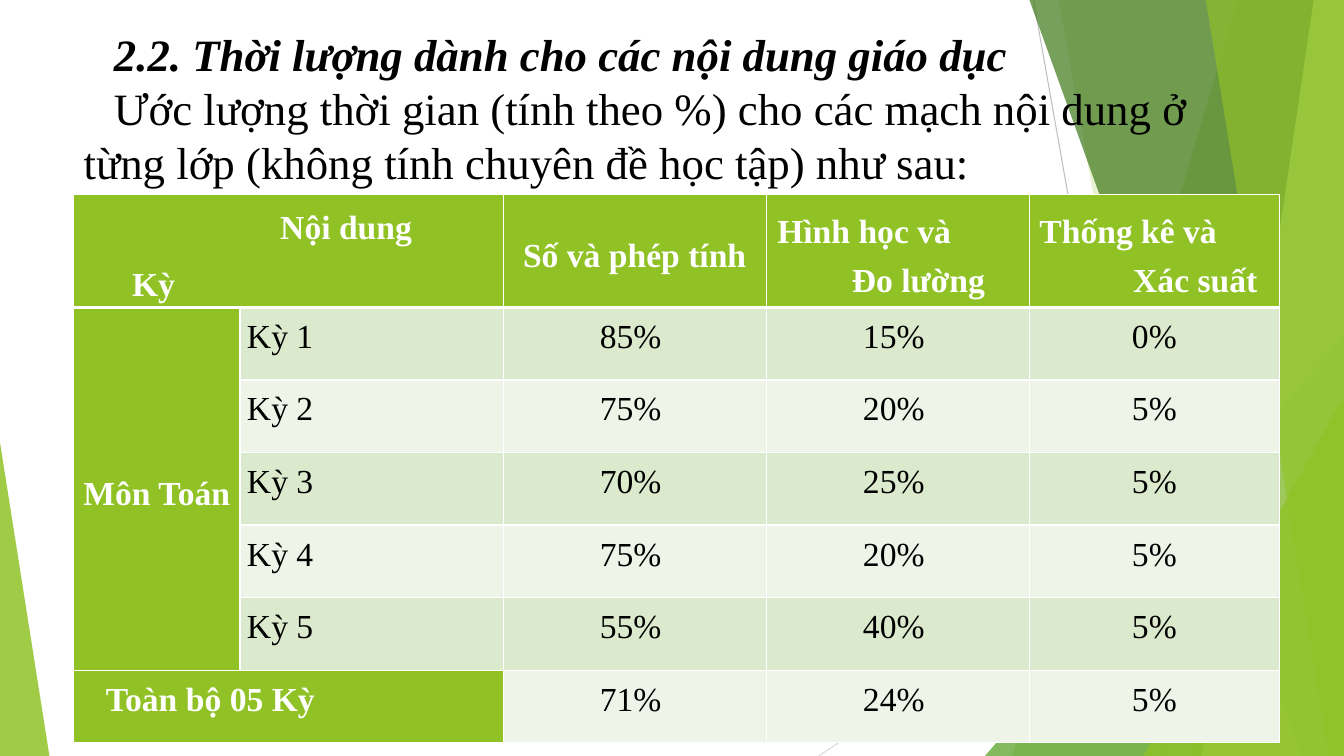
from dataclasses import dataclass
from lxml import etree
from pptx import Presentation
from pptx.dml.color import RGBColor
from pptx.enum.shapes import MSO_CONNECTOR, MSO_SHAPE
from pptx.enum.text import MSO_ANCHOR, MSO_AUTO_SIZE, PP_ALIGN
from pptx.oxml.ns import qn
from pptx.util import Inches, Pt

LEFT, CENTER = PP_ALIGN.LEFT, PP_ALIGN.CENTER
TOP, MIDDLE = MSO_ANCHOR.TOP, MSO_ANCHOR.MIDDLE
TRIANGLE, STRAIGHT = MSO_SHAPE.ISOSCELES_TRIANGLE, MSO_CONNECTOR.STRAIGHT
NO_FIT = MSO_AUTO_SIZE.NONE


@dataclass(frozen=True)
class Theme:
    """Colours, font and type sizes."""
    font: str = "Times New Roman"
    green: str = "90C226"
    leaf: str = "54A021"
    dark: str = "3F7819"
    lime: str = "C0E474"
    band: str = "DBE9CD"
    pale: str = "EEF4E8"
    white: str = "FFFFFF"
    black: str = "000000"
    gray: str = "BFBFBF"
    mist: str = "D9D9D9"
    head: int = 32
    body: int = 24


class Deck:
    """Draws elements on the current slide in one style."""

    def __init__(self, prs, theme):
        """Add a title-only slide."""
        self.theme = theme
        self.slide = prs.slides.add_slide(prs.slide_layouts[5])
        self.shapes = self.slide.shapes

    def line(self, start, end, color):
        """Draw a thin straight line."""
        item = self.shapes.add_connector(STRAIGHT, *map(Inches, start + end))
        item.line.color.rgb = RGBColor.from_string(color)
        item.line.width = Pt(0.75)
        etree.SubElement(item._element.spPr, qn("a:effectLst"))

    def paint(self, shape, color, alpha):
        """Fill a shape with a see-through colour."""
        shape.shadow.inherit = False
        shape.line.fill.background()
        shape.fill.solid()
        shape.fill.fore_color.rgb = RGBColor.from_string(color)
        tint = shape._element.spPr.find(".//" + qn("a:srgbClr"))
        etree.SubElement(tint, qn("a:alpha"), val=str(alpha * 1000))

    def facet(self, points, color, alpha):
        """Draw a closed polygon."""
        spots = [(Inches(x), Inches(y)) for x, y in points]
        outline = self.shapes.build_freeform(*spots[0])
        outline.add_line_segments(spots[1:], close=True)
        self.paint(outline.convert_to_shape(), color, alpha)

    def wedge(self, box, apex, color, alpha):
        """Draw a right triangle."""
        shape = self.shapes.add_shape(TRIANGLE, *map(Inches, box))
        shape.adjustments[0] = apex
        self.paint(shape, color, alpha)

    def style(self, para, size, color, bold=False, align=LEFT):
        """Format one paragraph."""
        para.alignment = align
        font = para.font
        font.name, font.size, font.bold = self.theme.font, Pt(size), bold
        font.color.rgb = RGBColor.from_string(color)

    def title(self, box, head, text):
        """Place the heading and its lead-in above the backdrop."""
        item = self.shapes.title
        item.left, item.top, item.width, item.height = map(Inches, box)
        self.shapes._spTree.append(item._element)
        frame = item.text_frame
        frame.text = f"{head}\n{text}"
        frame.word_wrap, frame.auto_size = True, NO_FIT
        frame.vertical_anchor = MIDDLE
        for para, bold in zip(frame.paragraphs, (True, False)):
            self.style(para, self.theme.head, self.theme.black, bold)
            para.font.italic = bold
            para._p.get_or_add_pPr().set("indent", str(Inches(0.3)))

    def table(self, box, cols, rows):
        """Add a plain table with given column widths and row heights."""
        grid = self.shapes.add_table(len(rows), len(cols), *map(Inches, box)).table
        grid.first_row = grid.horz_banding = False
        for col, size in zip(grid.columns, cols):
            col.width = Inches(size)
        for row, size in zip(grid.rows, rows):
            row.height = Inches(size)
        return grid

    def cell(self, cell, fill, top=1, bottom=1):
        """Fill and border one cell."""
        props = cell._tc.get_or_add_tcPr()
        for side, width in zip("LRTB", (1, 1, top, bottom)):
            edge = etree.SubElement(props, qn(f"a:ln{side}"), w=str(Pt(width)))
            solid = etree.SubElement(edge, qn("a:solidFill"))
            etree.SubElement(solid, qn("a:srgbClr"), val=self.theme.white)
        cell.fill.solid()
        cell.fill.fore_color.rgb = RGBColor.from_string(fill)
        cell.margin_left = cell.margin_right = Inches(0.07)
        cell.margin_top = cell.margin_bottom = 0

    def label(self, cell, text, head=False, align=CENTER, anchor=TOP, pads=(0,), gap=3):
        """Set a cell's text, one left indent per paragraph."""
        cell.text = text
        cell.vertical_anchor = anchor
        color = self.theme.white if head else self.theme.black
        for para, pad in zip(cell.text_frame.paragraphs, pads):
            self.style(para, self.theme.body, color, head, align)
            para.line_spacing = 1.3
            para.space_before = para.space_after = Pt(gap)
            para._p.get_or_add_pPr().set("marL", str(Inches(pad)))


def main():
    """Build the slide."""
    prs = Presentation()
    prs.slide_width, prs.slide_height = Inches(13.33), Inches(7.5)
    look = Theme()
    deck = Deck(prs, look)

    deck.line((10.25, 0), (11.58, 7.5), look.gray)
    deck.line((13.33, 4.03), (8.12, 7.5), look.mist)

    def strip(top, foot, color, alpha):
        """Draw a facet that reaches the right edge."""
        deck.facet([(top, 0), (13.33, 0), (13.33, 7.5), (foot, 7.5)], color, alpha)

    strip(12.28, 10.04, look.green, 30)
    strip(10.5, 11.83, look.green, 20)
    deck.wedge((9.77, 3.33, 3.56, 4.17), 1, look.leaf, 72)
    strip(10.21, 12.91, look.dark, 70)
    strip(13.03, 11.92, look.lime, 70)
    strip(11.96, 13.18, look.green, 65)
    deck.wedge((11.34, 3.93, 1.99, 3.57), 1, look.green, 80)
    deck.wedge((0, 4.39, 0.49, 3.11), 0, look.green, 85)

    grid = deck.table((0.73, 1.93, 11.96, 5.44),
                      [1.65, 2.61, 2.61, 2.61, 2.48], [1.12] + [0.72] * 6)
    for r in range(7):
        for c in range(5):
            head = r == 0 or c == 0 or (r == 6 and c == 1)
            fill = look.green if head else look.band if r % 2 else look.pale
            deck.cell(grid.cell(r, c), fill, 3 if r == 1 else 1, 3 if r == 0 else 1)
    for start, end in (((0, 0), (0, 1)), ((1, 0), (5, 0)), ((6, 0), (6, 1))):
        grid.cell(*start).merge(grid.cell(*end))

    deck.label(grid.cell(0, 0), "Nội dung\nKỳ", True, LEFT, MIDDLE, (1.98, 0.51))
    deck.label(grid.cell(0, 2), "Số và phép tính", True, anchor=MIDDLE)
    deck.label(grid.cell(0, 3), "Hình học và\nĐo lường", True, LEFT, MIDDLE, (0.04, 0.78), 0)
    deck.label(grid.cell(0, 4), "Thống kê và\nXác suất", True, LEFT, MIDDLE, (0.03, 0.96), 0)
    deck.label(grid.cell(1, 0), "Môn Toán", True, anchor=MIDDLE)
    deck.label(grid.cell(6, 0), "Toàn bộ 05 Kỳ", True, LEFT, pads=(0.25,))

    shares = [(85, 15, 0), (75, 20, 5), (70, 25, 5), (75, 20, 5), (55, 40, 5), (71, 24, 5)]
    for r, row in enumerate(shares, 1):
        if r < 6:
            deck.label(grid.cell(r, 1), f"Kỳ {r}", align=LEFT)
        for c, share in enumerate(row, 2):
            deck.label(grid.cell(r, c), f"{share}%")
            if c < 4:
                grid.cell(r, c).margin_right = Inches(0.15)

    deck.title((0.73, 0.21, 11.66, 1.72),
               "2.2. Thời lượng dành cho các nội dung giáo dục",
               "Ước lượng thời gian (tính theo %) cho các mạch nội dung ở từng lớp "
               "(không tính chuyên đề học tập) như sau:")
    prs.save("out.pptx")


if __name__ == "__main__":
    main()
